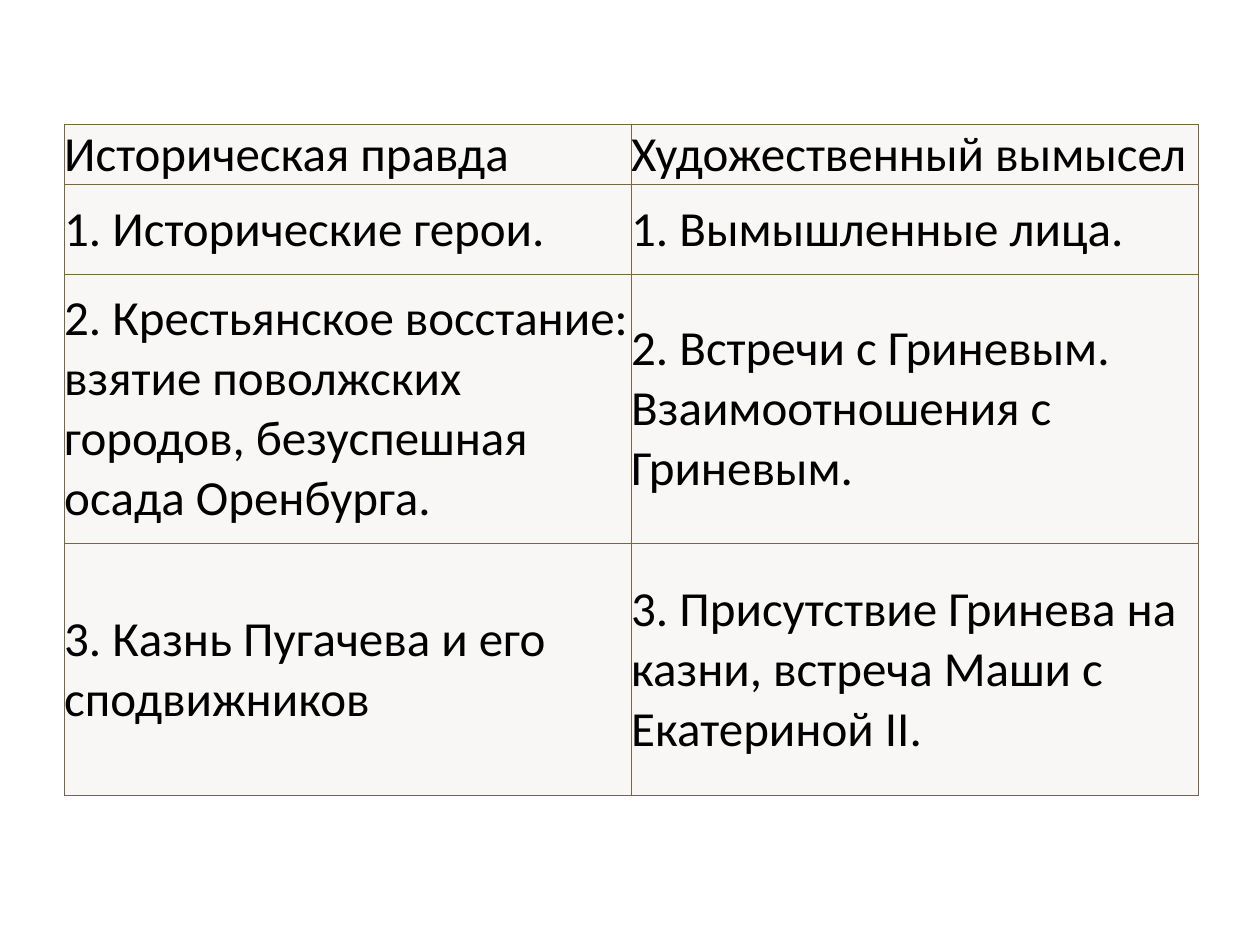
from lxml import etree
from pptx import Presentation
from pptx.dml.color import RGBColor
from pptx.enum import text
from pptx.oxml import ns
from pptx.util import Inches, Pt

COLORS = {"text": "000000", "cell": "F8F7F6", "border": "756840"}
FONT = "Calibri"
COLUMN_WIDTH = 4.5
ROW_HEIGHTS = [0.47, 0.71, 2.14, 2]
COMPARISON = [
    ("Историческая правда", "Художественный вымысел"),
    ("1. Исторические герои.", "1. Вымышленные лица."),
    ("2. Крестьянское восстание: взятие поволжских городов, "
     "безуспешная осада Оренбурга.",
     "2. Встречи с Гриневым. Взаимоотношения с Гриневым."),
    ("3. Казнь Пугачева и его сподвижников",
     "3. Присутствие Гринева на казни, встреча Маши с Екатериной II."),
]


def add_borders(cell):
    properties = cell._tc.get_or_add_tcPr()
    # Borders come before the fill in the cell properties
    for position, side in enumerate(("lnL", "lnR", "lnT", "lnB")):
        border = etree.Element(ns.qn(f"a:{side}"), w=str(Pt(0.75)))
        fill = etree.SubElement(border, ns.qn("a:solidFill"))
        etree.SubElement(fill, ns.qn("a:srgbClr"), val=COLORS["border"])
        properties.insert(position, border)


def fill_cell(cell, wording):
    cell.margin_left = cell.margin_right = 0
    cell.margin_top = cell.margin_bottom = 0
    cell.vertical_anchor = text.MSO_ANCHOR.MIDDLE
    cell.fill.solid()
    cell.fill.fore_color.rgb = RGBColor.from_string(COLORS["cell"])
    add_borders(cell)

    cell.text = wording
    font = cell.text_frame.paragraphs[0].font
    font.name = FONT
    font.size = Pt(28)
    font.bold = False
    font.color.rgb = RGBColor.from_string(COLORS["text"])


def add_comparison(slide, left, top):
    columns = len(COMPARISON[0])
    frame = slide.shapes.add_table(
        len(COMPARISON), columns, Inches(left), Inches(top),
        Inches(COLUMN_WIDTH * columns), Inches(sum(ROW_HEIGHTS)))
    comparison = frame.table
    comparison.first_row = comparison.horz_banding = False
    for column in comparison.columns:
        column.width = Inches(COLUMN_WIDTH)
    for row, height, wordings in zip(comparison.rows, ROW_HEIGHTS, COMPARISON):
        row.height = Inches(height)
        for cell, wording in zip(row.cells, wordings):
            fill_cell(cell, wording)


def main():
    presentation = Presentation()
    presentation.slide_width = Inches(10)
    presentation.slide_height = Inches(7.5)
    slide = presentation.slides.add_slide(presentation.slide_layouts[6])

    # Historical truth against fiction
    add_comparison(slide, 0.51, 0.99)

    presentation.save("out.pptx")


if __name__ == "__main__":
    main()
